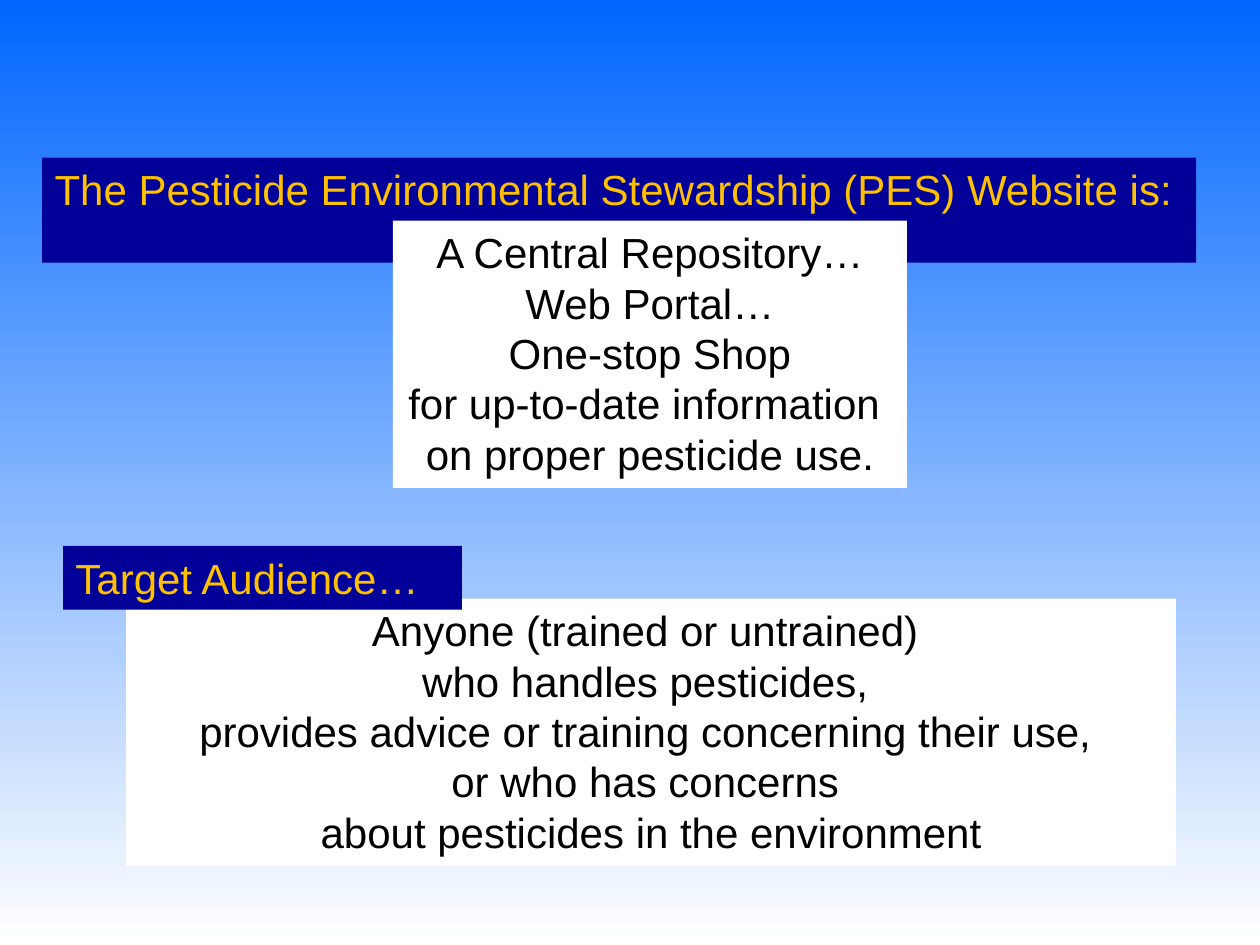
"""Build the slide that introduces the PES website and its audience."""
from dataclasses import dataclass

from pptx import Presentation
from pptx.dml.color import RGBColor
from pptx.enum.text import MSO_ANCHOR, MSO_AUTO_SIZE, PP_ALIGN
from pptx.shapes.autoshape import Shape
from pptx.util import Pt

SKY_BLUE = RGBColor(0x00, 0x66, 0xFF)
NAVY = RGBColor(0x00, 0x00, 0x99)
GOLD = RGBColor(0xFF, 0xC0, 0x00)
WHITE = RGBColor(0xFF, 0xFF, 0xFF)
BLACK = RGBColor(0x00, 0x00, 0x00)


@dataclass(frozen=True)
class PanelStyle:
    fill: RGBColor
    text: RGBColor
    alignment: PP_ALIGN


@dataclass(frozen=True)
class Panel:
    left: float
    top: float
    width: float
    height: float
    style: PanelStyle
    lines: tuple[str, ...]
    wrap: bool = True


HEADING = PanelStyle(NAVY, GOLD, PP_ALIGN.LEFT)
STATEMENT = PanelStyle(WHITE, BLACK, PP_ALIGN.CENTER)
FONT_FORMAT = {"name": "Arial", "size": Pt(24), "bold": False}
FRAME_FORMAT = {
    "vertical_anchor": MSO_ANCHOR.TOP,
    "margin_left": Pt(7.2),
    "margin_right": Pt(7.2),
    "margin_top": Pt(3.6),
    "margin_bottom": Pt(3.6),
}

TITLE = Panel(24, 90, 659.5, 36.35, HEADING, (
    "The Pesticide Environmental Stewardship (PES) Website is:",
))
PANELS = (
    Panel(224.5, 126, 293.75, 152.75, STATEMENT, (
        "A Central Repository…",
        "Web Portal…",
        "One-stop Shop",
        "for up-to-date information ",
        "on proper pesticide use.",
    ), wrap=False),
    Panel(72, 342, 600, 152.75, STATEMENT, (
        "Anyone (trained or untrained) ",
        "who handles pesticides, ",
        "provides advice or training concerning their use, ",
        "or who has concerns ",
        "about pesticides in the environment",
    )),
    Panel(36, 312, 228, 36.35, HEADING, ("Target Audience…",)),
)


def apply_format(target: object, values: dict) -> None:
    """Set each named attribute on the target."""
    for name, value in values.items():
        setattr(target, name, value)


def fill_panel(shape: Shape, panel: Panel) -> None:
    """Place a text shape and give it the panel's text and style."""
    apply_format(shape, {
        side: Pt(getattr(panel, side)) for side in ("left", "top", "width", "height")
    })
    shape.fill.solid()
    shape.fill.fore_color.rgb = panel.style.fill
    frame = shape.text_frame
    frame.text = "\n".join(panel.lines)
    apply_format(frame, FRAME_FORMAT)
    frame.word_wrap = panel.wrap
    frame.auto_size = MSO_AUTO_SIZE.SHAPE_TO_FIT_TEXT
    for paragraph in frame.paragraphs:
        paragraph.alignment = panel.style.alignment
        for run in paragraph.runs:
            apply_format(run.font, FONT_FORMAT)
            run.font.color.rgb = panel.style.text


def main() -> None:
    """Build and save the presentation."""
    presentation = Presentation()
    presentation.slide_width = Pt(720)
    presentation.slide_height = Pt(540)
    slide = presentation.slides.add_slide(presentation.slide_layouts[5])

    background = slide.background.fill
    background.gradient()
    background.gradient_angle = 270
    for stop, color, position in zip(background.gradient_stops, (SKY_BLUE, WHITE), (0, 1)):
        stop.color.rgb = color
        stop.position = position

    fill_panel(slide.shapes.title, TITLE)
    for panel in PANELS:
        fill_panel(slide.shapes.add_textbox(0, 0, 0, 0), panel)
    presentation.save("out.pptx")


if __name__ == "__main__":
    main()
